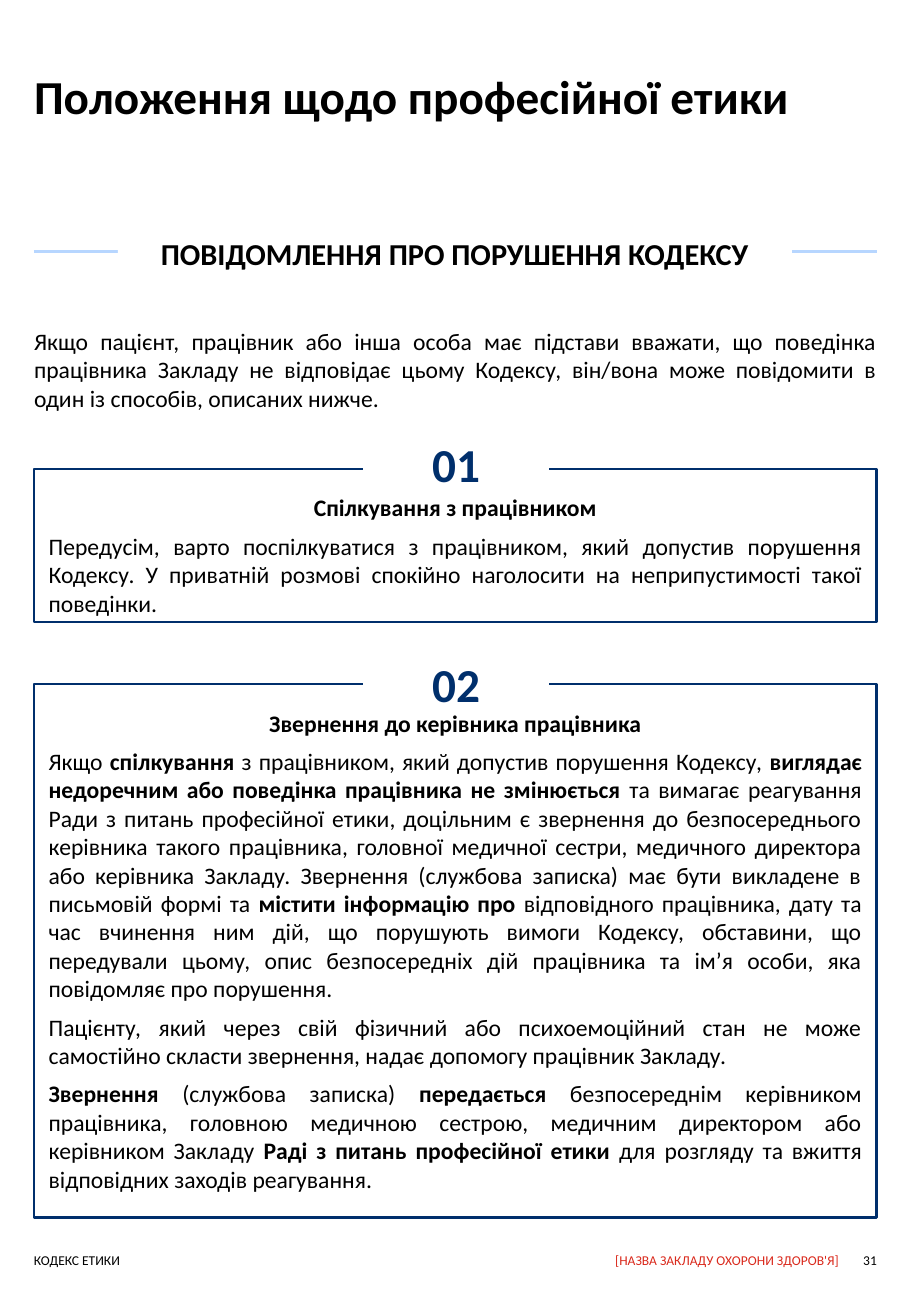
"""Build the code-of-ethics page on reporting violations."""
from dataclasses import dataclass

from lxml.etree import SubElement
from pptx import Presentation
from pptx.dml.color import RGBColor as RGB
from pptx.enum.shapes import MSO_CONNECTOR as CONN, MSO_SHAPE as SHAPE
from pptx.enum.text import MSO_ANCHOR as ANCHOR, PP_ALIGN as ALIGN
from pptx.oxml.ns import qn
from pptx.util import Inches, Pt

WIDTH, HEIGHT = Inches(7.5), Inches(10.83)
LEFT, SPAN = 3.73, 92.5
BADGE_LEFT, BADGE_SPAN, BADGE_TALL = 39.87, 20.4, 4.34
RULE_Y = 19.11


@dataclass(frozen=True)
class Theme:
    """Colours, font and type sizes."""
    ink: RGB = RGB(0, 0, 0)
    paper: RGB = RGB(255, 255, 255)
    navy: RGB = RGB(0x00, 0x2F, 0x6C)
    sky: RGB = RGB(0xB7, 0xD6, 0xFF)
    red: RGB = RGB(0xDA, 0x29, 0x1C)
    font: str = "Calibri"
    title: int = 28
    section: int = 18
    body: int = 14
    footer: int = 8


T = Theme()


@dataclass(frozen=True)
class Para:
    """A paragraph whose bold parts stand between asterisks."""
    text: str
    size: int = T.body
    align: ALIGN = ALIGN.JUSTIFY
    after: int = 6
    color: RGB = T.ink


@dataclass(frozen=True)
class Block:
    """A text area in percent of the slide, with optional fill and frame."""
    x: float
    y: float
    w: float
    h: float
    paras: tuple[Para, ...]
    fill: RGB | None = None
    frame: RGB | None = None
    anchor: ANCHOR = ANCHOR.TOP
    insets: tuple[float, float, float, float] = (0, 0, 0, 0)


def col(share: float) -> int:
    """Convert percent of the width to a length."""
    return round(WIDTH * share / 100)


def row(share: float) -> int:
    """Convert percent of the height to a length."""
    return round(HEIGHT * share / 100)


def step(y: float, h: float, heading: str, *texts: str) -> Block:
    """Describe a framed step."""
    paras = (Para(f"*{heading}*", align=ALIGN.CENTER), *map(Para, texts))
    return Block(LEFT, y, SPAN, h, paras, frame=T.navy, insets=(0.12, 0.2, 0.12, 0.08))


def badge(y: float, number: str) -> Block:
    """Describe the number that breaks a step's upper edge."""
    para = Para(f"*{number}*", T.title, ALIGN.CENTER, 0, T.navy)
    return Block(BADGE_LEFT, y, BADGE_SPAN, BADGE_TALL, (para,), fill=T.paper)


def footer(x: float, w: float, text: str, align: ALIGN, color: RGB = T.ink) -> Block:
    """Describe one part of the footer."""
    return Block(x, 95.11, w, 1.48, (Para(text, T.footer, align, 0, color),))


BLOCKS = (
    footer(52, 40.13, "[НАЗВА ЗАКЛАДУ ОХОРОНИ ЗДОРОВ'Я]", ALIGN.RIGHT, T.red),
    footer(93.73, 2.53, "31", ALIGN.RIGHT),
    footer(LEFT, 52.67, "КОДЕКС ЕТИКИ", ALIGN.LEFT),
    step(35.64, 11.63, "Спілкування з працівником",
         "Передусім, варто поспілкуватися з працівником, який допустив порушення Кодексу. "
         "У приватній розмові спокійно наголосити на неприпустимості такої поведінки."),
    step(51.99, 40.54, "Звернення до керівника працівника",
         "Якщо *спілкування* з працівником, який допустив порушення Кодексу, *виглядає "
         "недоречним або поведінка працівника не змінюється* та вимагає реагування Ради з "
         "питань професійної етики, доцільним є звернення до безпосереднього керівника "
         "такого працівника, головної медичної сестри, медичного директора або керівника "
         "Закладу. Звернення (службова записка) має бути викладене в письмовій формі та "
         "*містити інформацію про *відповідного працівника, дату та час вчинення ним дій, "
         "що порушують вимоги Кодексу, обставини, що передували цьому, опис безпосередніх "
         "дій працівника та ім’я особи, яка повідомляє про порушення.",
         "Пацієнту, який через свій фізичний або психоемоційний стан не може самостійно "
         "скласти звернення, надає допомогу працівник Закладу.",
         "*Звернення* (службова записка) *передається* безпосереднім керівником працівника, "
         "головною медичною сестрою, медичним директором або керівником Закладу *Раді з "
         "питань професійної етики *для розгляду та вжиття відповідних заходів реагування."),
    Block(LEFT, 5.08, SPAN, 4.89,
          (Para("*Положення щодо професійної етики*", T.title, ALIGN.LEFT, 0),)),
    Block(LEFT, 24.84, SPAN, 7.39, (Para(
        "Якщо пацієнт, працівник або інша особа має підстави вважати, що поведінка "
        "працівника Закладу не відповідає цьому Кодексу, він/вона може повідомити в один "
        "із способів, описаних нижче."),)),
    Block(12.93, 17.08, 74, BADGE_TALL,
          (Para("*ПОВІДОМЛЕННЯ ПРО ПОРУШЕННЯ КОДЕКСУ*", T.section, ALIGN.CENTER, 0),),
          fill=T.paper, anchor=ANCHOR.MIDDLE),
    badge(33.06, "01"),
    badge(49.77, "02"),
)


def apply(target: object, values: dict) -> None:
    """Set attributes from a dict of format values."""
    for name, value in values.items():
        setattr(target, name, value)


def write(tf, block: Block) -> None:
    """Fill a text frame with the block's paragraphs."""
    sides = ("margin_left", "margin_top", "margin_right", "margin_bottom")
    apply(tf, dict(zip(sides, map(Inches, block.insets))))
    apply(tf, {"word_wrap": True, "vertical_anchor": block.anchor})
    for i, para in enumerate(block.paras):
        p = tf.add_paragraph() if i else tf.paragraphs[0]
        apply(p, {"alignment": para.align, "space_after": Pt(para.after)})
        for j, part in enumerate(para.text.split("*")):
            if part:
                r = p.add_run()
                r.text = part
                apply(r.font, {"name": T.font, "size": Pt(para.size), "bold": j % 2 == 1})
                r.font.color.rgb = para.color


def draw_block(s, block: Block) -> None:
    """Draw a text box, or a rectangle if the block has a fill or frame."""
    place = col(block.x), row(block.y), col(block.w), row(block.h)
    if block.fill is None and block.frame is None:
        sp = s.shapes.add_textbox(*place)
    else:
        sp = s.shapes.add_shape(SHAPE.RECTANGLE, *place)
        sp.shadow.inherit = False
        for part, color in ((sp.fill, block.fill), (sp.line.fill, block.frame)):
            if color is None:
                part.background()
            else:
                part.solid()
                part.fore_color.rgb = color
        if block.frame is not None:
            sp.line.width = Pt(1.5)
    write(sp.text_frame, block)


def draw_rule(s) -> None:
    """Draw the line that runs behind the section heading."""
    y = row(RULE_Y)
    line = s.shapes.add_connector(CONN.STRAIGHT, col(LEFT), y, col(LEFT + SPAN), y)
    line.line.color.rgb = T.sky
    line.line.width = Pt(2.25)
    SubElement(line._element.spPr, qn("a:effectLst"))


def main() -> None:
    """Build and save the slide."""
    prs = Presentation()
    apply(prs, {"slide_width": WIDTH, "slide_height": HEIGHT})
    s = prs.slides.add_slide(prs.slide_layouts[6])
    draw_rule(s)
    for block in BLOCKS:
        draw_block(s, block)
    prs.save("out.pptx")


if __name__ == "__main__":
    main()
